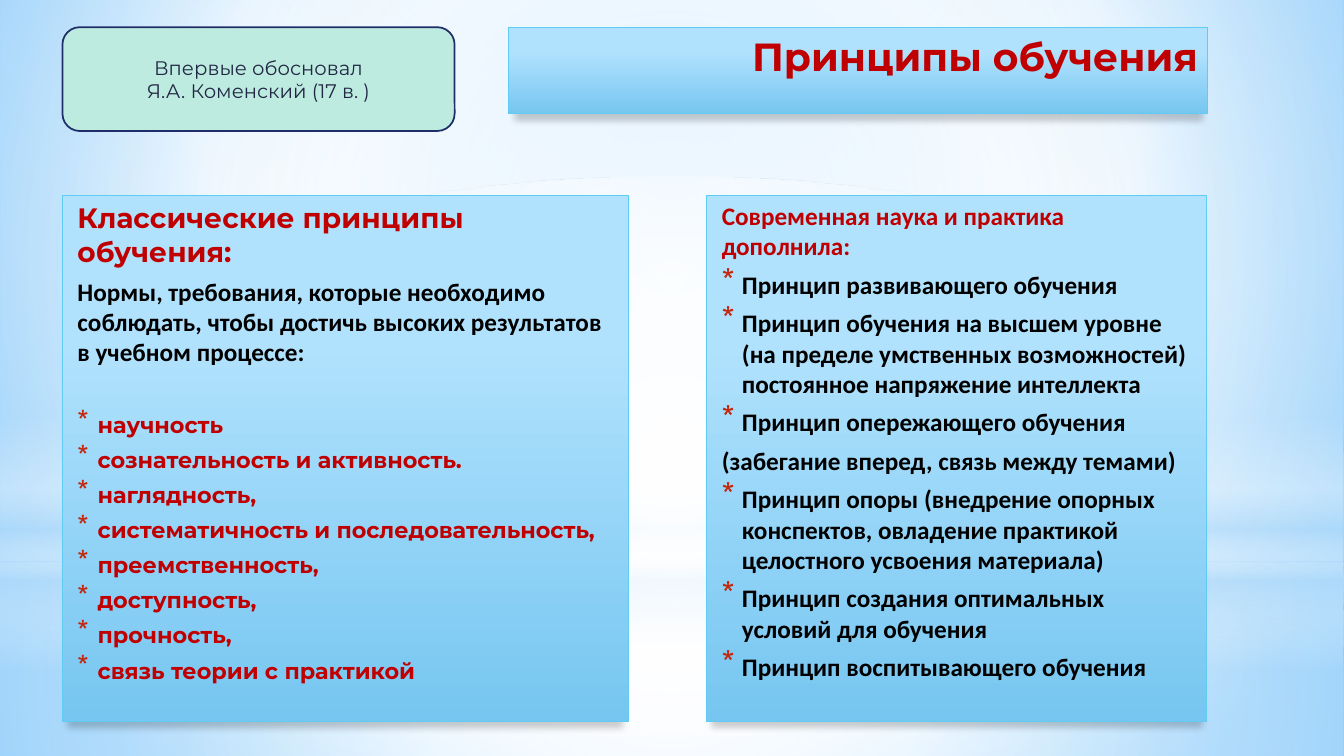
from lxml.etree import SubElement
from pptx import Presentation
from pptx.dml.color import RGBColor
from pptx.enum.shapes import MSO_SHAPE
from pptx.enum.text import MSO_ANCHOR, PP_ALIGN
from pptx.oxml import parse_xml
from pptx.oxml.ns import nsdecls, qn
from pptx.util import Inches, Pt

RED, BLACK, NAVY = "C00000", "000000", "212745"
PANEL_STOPS = [(28, "B1E2FD"), (100, "76C6F1")]
CENTER = (50, 50, 50, 50)
GAP_BEFORE = 2.9

CLASSIC_PRINCIPLES = [
    "научность",
    "сознательность и активность.",
    "наглядность,",
    "систематичность и последовательность,",
    "преемственность,",
    "доступность,",
    "прочность,",
    "связь теории с практикой",
]
# (text, has a bullet)
MODERN_PRINCIPLES = [
    ("Принцип развивающего обучения", True),
    ("Принцип обучения на высшем уровне (на пределе умственных возможностей) "
     "постоянное напряжение интеллекта", True),
    ("Принцип опережающего обучения", True),
    ("(забегание вперед, связь между темами)", False),
    ("Принцип опоры (внедрение опорных конспектов, овладение практикой "
     "целостного усвоения материала)", True),
    ("Принцип создания оптимальных условий для обучения", True),
    ("Принцип воспитывающего обучения", True),
]

prs = Presentation()
prs.slide_width, prs.slide_height = Inches(13.33), Inches(7.5)
slide = prs.slides.add_slide(prs.slide_layouts[6])


def color(value):
    return RGBColor.from_string(value)


def set_gradient(properties, stops, focus=None):
    """Swap the solid fill for a downward gradient, or a circular one around focus.

    Stops are (percent, colour) or (percent, colour, opacity percent)."""
    stop_xml = ""
    for position, value, *opacity in stops:
        alpha = "".join(f'<a:alpha val="{share * 1000}"/>' for share in opacity)
        stop_xml += (f'<a:gs pos="{position * 1000}"><a:srgbClr val="{value}">'
                     f'{alpha}</a:srgbClr></a:gs>')
    if focus:
        sides = " ".join(f'{side}="{share * 1000}"' for side, share in zip("ltrb", focus))
        direction = f'<a:path path="circle"><a:fillToRect {sides}/></a:path>'
    else:
        direction = '<a:lin ang="5400000" scaled="0"/>'
    gradient = parse_xml(f'<a:gradFill {nsdecls("a")} rotWithShape="1">'
                         f'<a:gsLst>{stop_xml}</a:gsLst>{direction}</a:gradFill>')
    properties.replace(properties.find(qn("a:solidFill")), gradient)


def add_box(preset, box, fill="FFFFFF", outline=None, width=0.75):
    """Place a shape; box is left, top, width, height in percent of the slide."""
    left, top, wide, high = box
    shape = slide.shapes.add_shape(
        preset, int(prs.slide_width * left / 100), int(prs.slide_height * top / 100),
        int(prs.slide_width * wide / 100), int(prs.slide_height * high / 100))
    shape.shadow.inherit = False
    shape.fill.solid()
    shape.fill.fore_color.rgb = color(fill)
    if outline:
        shape.line.color.rgb = color(outline)
        shape.line.width = Pt(width)
    else:
        shape.line.fill.background()
    return shape


def add_panel(box):
    """Add a blue panel with a soft shadow and return its text frame."""
    panel = add_box(MSO_SHAPE.RECTANGLE, box, outline="5ECCF3")
    properties = panel.element.spPr
    set_gradient(properties, PANEL_STOPS)
    shadow = SubElement(properties.find(qn("a:effectLst")), qn("a:outerShdw"),
                        blurRad="63500", dist="50800", dir="5400000",
                        sx="98000", sy="98000", rotWithShape="0")
    tint = SubElement(shadow, qn("a:srgbClr"), val="000000")
    SubElement(tint, qn("a:alpha"), val="20000")
    panel.text_frame.word_wrap = True
    panel.text_frame.vertical_anchor = MSO_ANCHOR.TOP
    return panel.text_frame


def write(frame, text, size, font, ink, bold=True, align=PP_ALIGN.LEFT):
    """Write into the empty first paragraph, or into a new one after it."""
    paragraph = frame.paragraphs[0]
    if paragraph.runs:
        paragraph = frame.add_paragraph()
    paragraph.alignment = align
    run = paragraph.add_run()
    run.text = text
    run.font.size, run.font.name, run.font.bold = Pt(size), font, bold
    run.font.color.rgb = color(ink)
    return paragraph


def write_principle(frame, text, size, font, ink, bullet=False, before=GAP_BEFORE):
    paragraph = write(frame, text, size, font, ink)
    paragraph.space_before, paragraph.space_after = Pt(before), Pt(3)
    properties = paragraph._p.get_or_add_pPr()
    properties.set("marL", str(Inches(0.25 if bullet else 0.05)))
    properties.set("indent", str(Inches(-0.2 if bullet else 0)))
    if bullet:
        tint = SubElement(properties, qn("a:buClr"))
        SubElement(tint, qn("a:srgbClr"), val="C3260C")
        SubElement(properties, qn("a:buSzPct"), val="130000")
        SubElement(properties, qn("a:buChar"), char="*")


def draw_backdrop():
    slide.background.fill.solid()
    set_gradient(slide.element.xpath(".//p:bgPr")[0],
                 [(0, "9ED5FF"), (60, "FFFFFF"), (100, "5BB9FF")], (20, 10, 20, 60))
    horizon = 74.4
    glows = [
        (MSO_SHAPE.RECTANGLE, (0, horizon, 100, 100 - horizon), CENTER,
         [(0, "FFFFFF", 91), (37, "FFFFFF", 76), (100, "B4DCFA", 79)]),
        (MSO_SHAPE.RECTANGLE, (0, 0, 100, horizon), CENTER,
         [(0, "FFFFFF", 89), (48, "FFFFFF", 62), (100, "B4DCFA", 79)]),
        (MSO_SHAPE.RECTANGLE, (0, 54.93, 100, 33.33), None,
         [(0, "FFFFFF", 0), (29, "FFFFFF", 30), (45, "B4DCFA", 40),
          (55, "FFFFFF", 26), (65, "B4DCFA", 60), (100, "FFFFFF", 0)]),
        (MSO_SHAPE.OVAL, (0, 23.33, 100, horizon), CENTER,
         [(0, "FFFFFF"), (56, "FFFFFF", 0)]),
    ]
    for preset, box, focus, stops in glows:
        set_gradient(add_box(preset, box).element.spPr, stops, focus)


def draw_title(box):
    write(add_panel(box), "Принципы обучения", 28, "Montserrat", RED, align=PP_ALIGN.RIGHT)


def draw_classic(box):
    frame = add_panel(box)
    write_principle(frame, "Классические принципы обучения:", 20, "Montserrat", RED, before=0)
    write_principle(frame, "Нормы, требования, которые необходимо соблюдать, чтобы достичь "
                    "высоких результатов в учебном процессе:", 18, "Calibri", BLACK)
    for index, principle in enumerate(CLASSIC_PRINCIPLES):
        write_principle(frame, principle, 16, "Montserrat", RED, True,
                        GAP_BEFORE if index else 28.5)


def draw_modern(box):
    frame = add_panel(box)
    write_principle(frame, "Современная наука и практика дополнила:", 18, "Calibri", RED,
                    before=0)
    for principle, bullet in MODERN_PRINCIPLES:
        write_principle(frame, principle, 18, "Calibri", BLACK, bullet)


def draw_founder(box):
    badge = add_box(MSO_SHAPE.ROUNDED_RECTANGLE, box, "BEEBDF", "1F2E69", 1.25)
    badge.text_frame.word_wrap = True
    badge.text_frame.vertical_anchor = MSO_ANCHOR.MIDDLE
    for line in ("Впервые обосновал", "Я.А. Коменский (17 в. )"):
        write(badge.text_frame, line, 14, "Montserrat", NAVY, False, PP_ALIGN.CENTER)


margin, header_top, panel_top, panel_height = 4.65, 3.6, 25.87, 69.6
draw_backdrop()
draw_title((37.81, header_top, 52.06, 11.47))
draw_classic((margin, panel_top, 42.09, panel_height))
draw_modern((52.59, panel_top, 37.21, panel_height))
draw_founder((margin, header_top, 29.18, 13.73))
prs.save("out.pptx")
